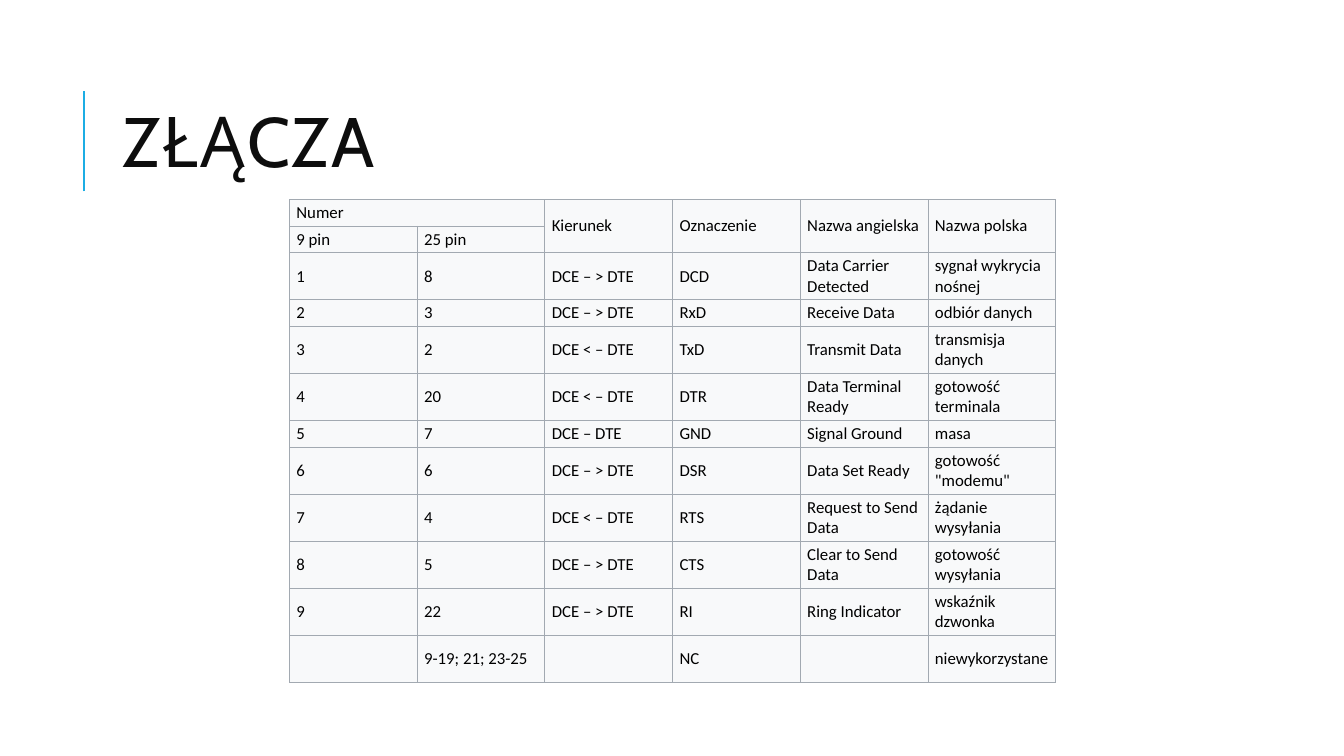
import pptx
import pptx.dml.color
import pptx.enum.shapes
import pptx.enum.text
import pptx.oxml
import pptx.oxml.ns
import pptx.util

COLORS = {"accent": "1CADE4", "title": "0D0D0D", "text": "000000",
          "cell": "F8F9FA", "border": "A2A9B1"}
WIDTH, HEIGHT = pptx.util.Inches(13.33), pptx.util.Inches(7.5)

# Boxes: left, top, width, height in percent of the slide
ACCENT_BOX = (6.23, 12, 0, 13.33)
TITLE_BOX = (8.4, 8.53, 79.74, 21.87)
TABLE_BOX = (21.53, 26.4, 57.01, 63.87)

# Relative heights of one-line and two-line rows
SINGLE, DOUBLE = 13, 23
PIN_ROWS = [
    (SINGLE, "Numer", "", "Kierunek", "Oznaczenie", "Nazwa angielska", "Nazwa polska"),
    (SINGLE, "9 pin", "25 pin", "", "", "", ""),
    (DOUBLE, "1", "8", "DCE – > DTE", "DCD", "Data Carrier Detected", "sygnał wykrycia nośnej"),
    (SINGLE, "2", "3", "DCE – > DTE", "RxD", "Receive Data", "odbiór danych"),
    (DOUBLE, "3", "2", "DCE < – DTE", "TxD", "Transmit Data", "transmisja danych"),
    (DOUBLE, "4", "20", "DCE < – DTE", "DTR", "Data Terminal Ready", "gotowość terminala"),
    (SINGLE, "5", "7", "DCE – DTE", "GND", "Signal Ground", "masa"),
    (DOUBLE, "6", "6", "DCE – > DTE", "DSR", "Data Set Ready", "gotowość \"modemu\""),
    (DOUBLE, "7", "4", "DCE < – DTE", "RTS", "Request to Send Data", "żądanie wysyłania"),
    (DOUBLE, "8", "5", "DCE – > DTE", "CTS", "Clear to Send Data", "gotowość wysyłania"),
    (DOUBLE, "9", "22", "DCE – > DTE", "RI", "Ring Indicator", "wskaźnik dzwonka"),
    (DOUBLE, "", "9-19; 21; 23-25", "", "NC", "", "niewykorzystane"),
]
CELL_FORMAT = {
    "margin_left": pptx.util.Inches(0.07), "margin_right": pptx.util.Inches(0.07),
    "margin_top": pptx.util.Inches(0.03), "margin_bottom": pptx.util.Inches(0.03),
    "vertical_anchor": pptx.enum.text.MSO_ANCHOR.MIDDLE,
}


def apply_format(target, values):
    for name, value in values.items():
        setattr(target, name, value)


def color(name):
    return pptx.dml.color.RGBColor.from_string(COLORS[name])


def place(box):
    left, top, width, height = box
    return [round(share * size / 100) for share, size in
            ((left, WIDTH), (top, HEIGHT), (width, WIDTH), (height, HEIGHT))]


def add_accent(slide, box):
    left, top, width, height = place(box)
    line = slide.shapes.add_connector(
        pptx.enum.shapes.MSO_CONNECTOR.STRAIGHT, left, top + height, left + width, top)
    line.line.color.rgb = color("accent")
    line.line.width = pptx.util.Pt(1.5)
    line._element.spPr.append(pptx.oxml.parse_xml(
        f"<a:effectLst {pptx.oxml.ns.nsdecls('a')}/>"))


def add_title(slide, box, text):
    title = slide.shapes.title
    apply_format(title, dict(zip(("left", "top", "width", "height"), place(box))))
    apply_format(title.text_frame, {
        "text": text, "word_wrap": True,
        "auto_size": pptx.enum.text.MSO_AUTO_SIZE.NONE,
        "vertical_anchor": pptx.enum.text.MSO_ANCHOR.MIDDLE})
    paragraph = title.text_frame.paragraphs[0]
    apply_format(paragraph, {"alignment": pptx.enum.text.PP_ALIGN.LEFT,
                             "line_spacing": 0.8})
    font = paragraph.runs[0].font
    apply_format(font, {"name": "Cabin", "size": pptx.util.Pt(50)})
    font.color.rgb = color("title")
    font._element.set("spc", "100")


def add_borders(cell):
    properties = cell._tc.get_or_add_tcPr()
    for side in ("lnL", "lnR", "lnT", "lnB"):
        properties.append(pptx.oxml.parse_xml(
            f'<a:{side} {pptx.oxml.ns.nsdecls("a")} w="{pptx.util.Pt(0.6)}">'
            f'<a:solidFill><a:srgbClr val="{COLORS["border"]}"/></a:solidFill></a:{side}>'))


def fill_cell(cell, text):
    add_borders(cell)
    cell.fill.solid()
    cell.fill.fore_color.rgb = color("cell")
    apply_format(cell, CELL_FORMAT)
    if text:
        cell.text = text
        font = cell.text_frame.paragraphs[0].runs[0].font
        apply_format(font, {"name": "Calibri", "size": pptx.util.Pt(12)})
        font.color.rgb = color("text")


def add_pin_table(slide, box, rows):
    left, top, width, height = place(box)
    column_count = len(rows[0]) - 1
    table = slide.shapes.add_table(
        len(rows), column_count, left, top, width, height).table
    apply_format(table, {"first_row": False, "horz_banding": False})
    for column in table.columns:
        column.width = width // column_count
    total = sum(row[0] for row in rows)
    for row_index, (units, *texts) in enumerate(rows):
        table.rows[row_index].height = height * units // total
        for column_index, text in enumerate(texts):
            fill_cell(table.cell(row_index, column_index), text)

    # Header spans: pin numbers across, the others down
    table.cell(0, 0).merge(table.cell(0, 1))
    for column_index in range(2, column_count):
        table.cell(0, column_index).merge(table.cell(1, column_index))


def main():
    presentation = pptx.Presentation()
    apply_format(presentation, {"slide_width": WIDTH, "slide_height": HEIGHT})
    slide = presentation.slides.add_slide(presentation.slide_layouts[5])
    add_accent(slide, ACCENT_BOX)
    add_title(slide, TITLE_BOX, "ZŁĄCZA")
    add_pin_table(slide, TABLE_BOX, PIN_ROWS)
    presentation.save("out.pptx")


if __name__ == "__main__":
    main()
